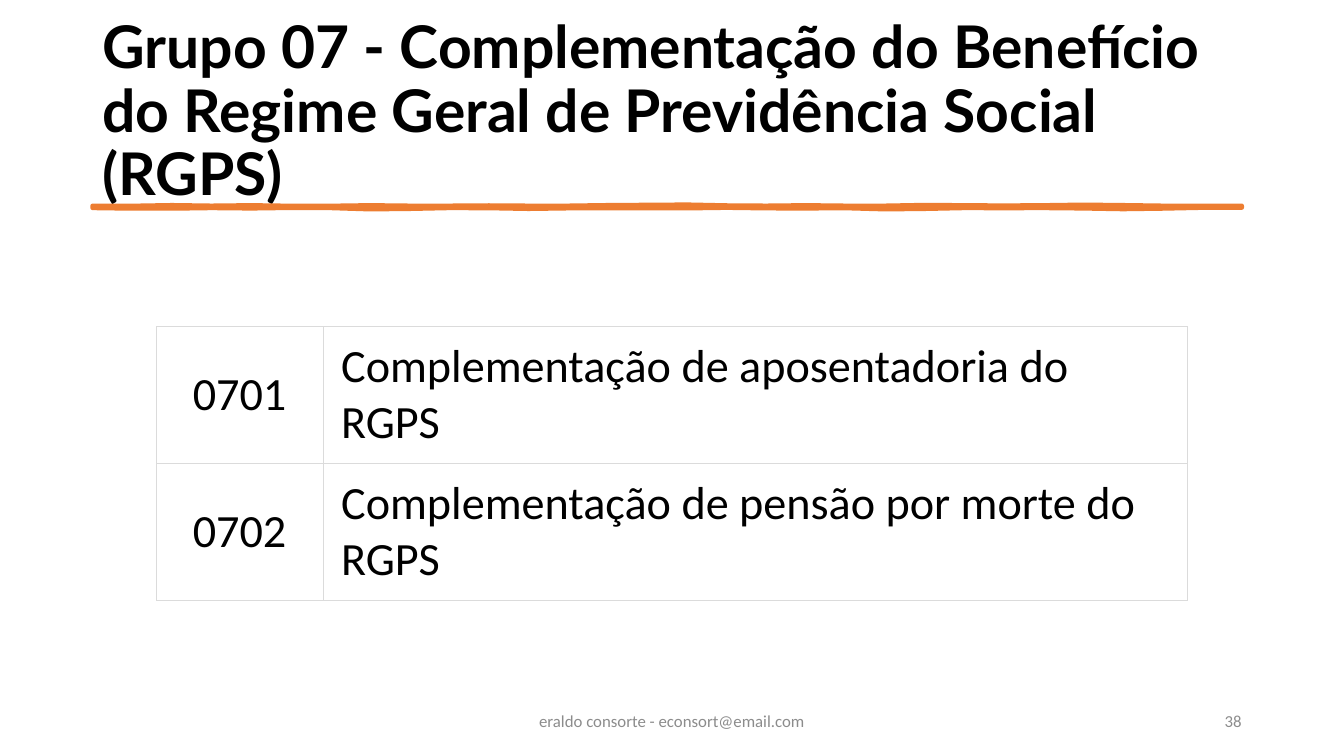
from pptx import Presentation
from pptx.dml.color import RGBColor
from pptx.enum.text import MSO_ANCHOR as Anchor, PP_ALIGN as Align
from pptx.oxml import parse_xml
from pptx.oxml.ns import nsdecls
from pptx.util import Pt

BLACK = RGBColor(0x00, 0x00, 0x00)
WHITE = RGBColor(0xFF, 0xFF, 0xFF)
GRAY = RGBColor(0x8C, 0x8C, 0x8C)
PALE = RGBColor(0xDB, 0xDB, 0xDB)
ORANGE = RGBColor(0xED, 0x7D, 0x31)

TITLE = ("Grupo 07 - Complementação do Benefício do Regime Geral "
         "de Previdência Social (RGPS)")
ROWS = [
    ("0701", "Complementação de aposentadoria do RGPS"),
    ("0702", "Complementação de pensão por morte do RGPS"),
]
# Height of the upper and lower edge at equal steps along the brush stroke
UPPER = [0, 0.1, -0.4, 0, -0.3, 0.1, 0.1, -0.3, 0, 0, -0.2, 0, 0, -0.4,
         -0.6, -0.8, -0.2, 0, -0.3, 0, 0, -0.5, -0.3, -0.1, -0.3, -0.7,
         -0.4, 0, 0, 0]
LOWER = [1.5, 1.9, 1.9, 1.5, 1.8, 1.4, 1.5, 2.4, 2.1, 1.5, 1.6, 2.1, 1.7,
         1.6, 1.6, 1.7, 1.3, 1.7, 1.8, 1.6, 2.4, 2.1, 1.5, 1.6, 1.5, 1.8,
         2.3, 1.9, 1.3, 1.3]


def write(frame, text, font, size, color, align=Align.LEFT, bold=False):
    para = frame.paragraphs[0]
    para.alignment = align
    run = para.add_run()
    run.text = text
    run.font.name = font
    run.font.size = Pt(size)
    run.font.bold = bold
    run.font.color.rgb = color
    return para


def add_text(slide, box, *args, **opts):
    frame = slide.shapes.add_textbox(*map(Pt, box)).text_frame
    frame.word_wrap = True
    frame.vertical_anchor = Anchor.MIDDLE
    return write(frame, *args, **opts)


def add_title(slide, box):
    para = add_text(slide, box, TITLE, "Lato", 42, BLACK, bold=True)
    para.line_spacing = 0.9


def add_stroke(slide, left, top, width):
    """Draw the uneven brush line under the title."""
    step = width / (len(UPPER) - 1)
    over = [(left + i * step, top + y) for i, y in enumerate(UPPER)]
    under = [(left + i * step, top + y) for i, y in enumerate(LOWER)]
    points = [(Pt(x), Pt(y)) for x, y in over + under[::-1]]
    pen = slide.shapes.build_freeform(*points[0])
    pen.add_line_segments(points[1:], close=True)
    stroke = pen.convert_to_shape()
    stroke.shadow.inherit = False
    stroke.fill.solid()
    stroke.fill.fore_color.rgb = ORANGE
    stroke.line.color.rgb = ORANGE
    stroke.line.width = Pt(3.25)


def style_cell(cell):
    props = cell._tc.get_or_add_tcPr()
    for side in "LRTB":
        props.append(parse_xml(
            f'<a:ln{side} {nsdecls("a")} w="{Pt(0.5)}"><a:solidFill>'
            f'<a:srgbClr val="{PALE}"/></a:solidFill></a:ln{side}>'))
    cell.fill.solid()
    cell.fill.fore_color.rgb = WHITE
    cell.vertical_anchor = Anchor.MIDDLE
    cell.margin_left = cell.margin_right = Pt(13)
    cell.margin_top = cell.margin_bottom = Pt(6.5)


def add_codes(slide, box):
    """Place the table of codes and their meanings."""
    width, height = box[2:]
    table = slide.shapes.add_table(len(ROWS), 2, *map(Pt, box)).table
    table.first_row = table.horz_banding = False
    code = 119
    for col, size in zip(table.columns, (code, width - code)):
        col.width = Pt(size)
    for r, row in enumerate(ROWS):
        table.rows[r].height = Pt(height / len(ROWS))
        for c, text in enumerate(row):
            cell = table.cell(r, c)
            style_cell(cell)
            write(cell.text_frame, text, "Calibri", 33, BLACK,
                  Align.LEFT if c else Align.CENTER)


def add_footer(slide, top, height):
    parts = [
        (318, 324, "eraldo consorte - econsort@email.com", Align.CENTER),
        (678, 216, "38", Align.RIGHT),
    ]
    for left, width, text, align in parts:
        para = add_text(slide, (left, top, width, height), text,
                        "Calibri", 12, GRAY, align)
        para.space_after = Pt(6)


def main():
    deck = Presentation()
    deck.slide_width, deck.slide_height = Pt(960), Pt(540)
    slide = deck.slides.add_slide(deck.slide_layouts[6])
    add_title(slide, (66, 28.8, 828, 104.4))
    add_stroke(slide, 66.2, 147, 820.8)
    add_footer(slide, 500.5, 28.8)
    add_codes(slide, (111.7, 233.2, 736.5, 195.4))
    deck.save("out.pptx")


if __name__ == "__main__":
    main()
